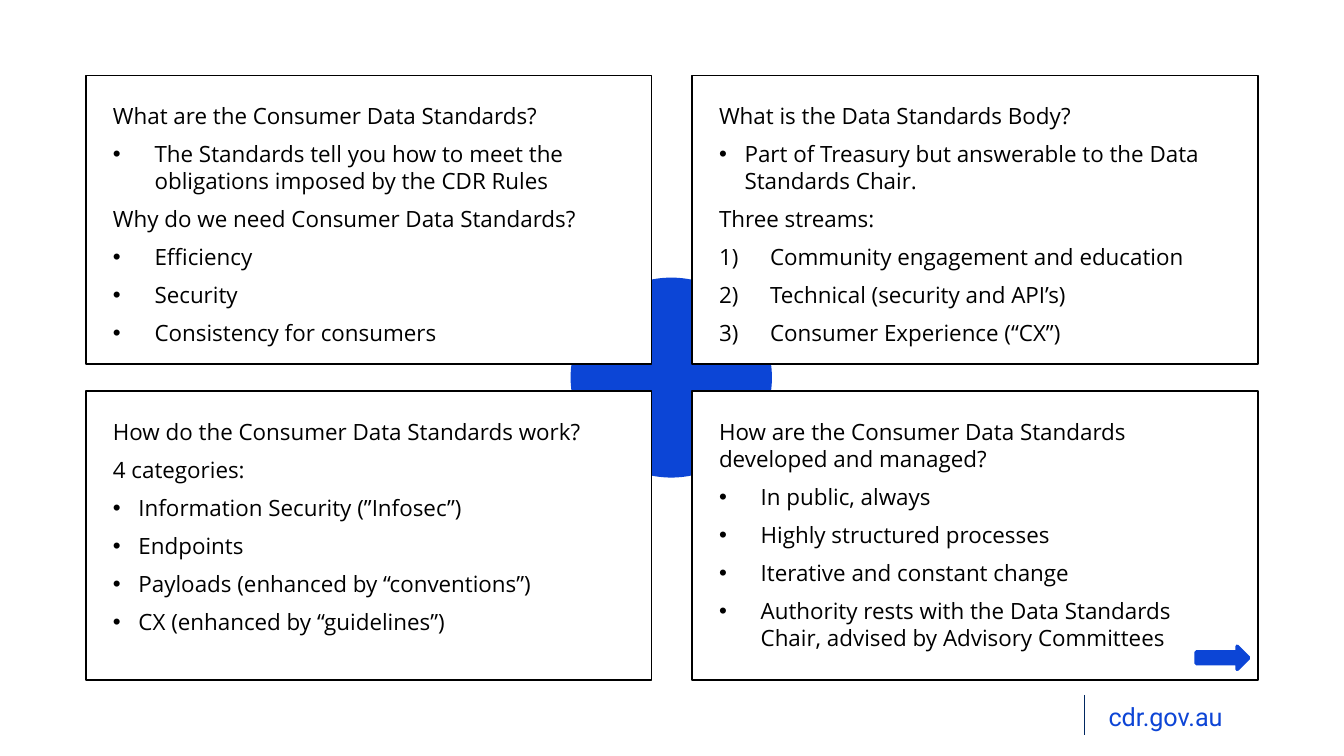
from lxml.etree import SubElement
from pptx import Presentation
from pptx.dml.color import RGBColor
from pptx.enum.shapes import MSO_CONNECTOR, MSO_SHAPE
from pptx.enum.text import MSO_ANCHOR, PP_ALIGN
from pptx.oxml.ns import qn
from pptx.util import Inches, Pt

BLUE = RGBColor(0x0C, 0x45, 0xD6)
FOOTER_BLUE = RGBColor(0x0D, 0x45, 0xD6)
NAVY = RGBColor(0x00, 0x27, 0x60)
BLACK = RGBColor(0, 0, 0)
WHITE = RGBColor(255, 255, 255)

# Two by two grid of cards
LEFT, TOP = 0.64, 0.56
CARD_W, CARD_H = 4.21, 2.15
COLUMN_STEP, ROW_STEP = CARD_W + 0.3, CARD_H + 0.2
INSET = Inches(0.2)

# Each card: column, row, bullet indent, lines of (marker, text)
CARDS = [
    (0, 0, 0.31, [
        ("", "What are the Consumer Data Standards?"),
        ("•", "The Standards tell you how to meet the obligations imposed by the CDR Rules"),
        ("", "Why do we need Consumer Data Standards?"),
        ("•", "Efficiency"),
        ("•", "Security"),
        ("•", "Consistency for consumers"),
    ]),
    (1, 0, 0.19, [
        ("", "What is the Data Standards Body?"),
        ("•", "Part of Treasury but answerable to the Data Standards Chair."),
        ("", "Three streams:"),
        ("1)", "Community engagement and education"),
        ("1)", "Technical (security and API’s)"),
        ("1)", "Consumer Experience (“CX”)"),
    ]),
    (1, 1, 0.31, [
        ("", "How are the Consumer Data Standards developed and managed?"),
        ("•", "In public, always"),
        ("•", "Highly structured processes"),
        ("•", "Iterative and constant change"),
        ("•", "Authority rests with the Data Standards Chair, advised by Advisory Committees"),
    ]),
    (0, 1, 0.19, [
        ("", "How do the Consumer Data Standards work?"),
        ("", "4 categories:"),
        ("•", "Information Security (”Infosec”)"),
        ("•", "Endpoints"),
        ("•", "Payloads (enhanced by “conventions”)"),
        ("•", "CX (enhanced by “guidelines”)"),
    ]),
]
NUMBER_INDENT = 0.38


def add_filled(preset, left, top, width, height, fill, outline, weight):
    shape = slide.shapes.add_shape(
        preset, Inches(left), Inches(top), Inches(width), Inches(height))
    shape.shadow.inherit = False
    shape.fill.solid()
    shape.fill.fore_color.rgb = fill
    shape.line.color.rgb = outline
    shape.line.width = Pt(weight)
    return shape


def set_marker(paragraph, marker, indent):
    properties = paragraph._p.get_or_add_pPr()
    properties.set("marL", str(Inches(indent)))
    properties.set("indent", str(-Inches(indent)))
    if marker == "•":
        SubElement(properties, qn("a:buFont"), typeface="Arial")
        SubElement(properties, qn("a:buChar"), char=marker)
    else:
        SubElement(properties, qn("a:buAutoNum"), type="arabicParenR")


prs = Presentation()
prs.slide_width = Inches(10)
prs.slide_height = prs.slide_width * 9 // 16
slide = prs.slides.add_slide(prs.slide_layouts[6])

# Footer address and its divider
footer = slide.shapes.add_textbox(Inches(8.15), Inches(5.17), Inches(1.57), Inches(0.33))
footer.text_frame.word_wrap = True
address = footer.text_frame.paragraphs[0]
address.text = "cdr.gov.au"
address.font.name = "Roboto"
address.font.size = Pt(13.5)
address.font.color.rgb = FOOTER_BLUE

divider = slide.shapes.add_connector(
    MSO_CONNECTOR.STRAIGHT, Inches(8.07), Inches(5.17), Inches(8.07), Inches(5.47))
divider.line.color.rgb = NAVY
divider.line.width = Pt(0.75)
SubElement(divider._element.spPr, qn("a:effectLst"))

# Hub behind the cards
add_filled(MSO_SHAPE.OVAL, 4.26, 2.08, 1.47, 1.46, BLUE, BLUE, 2)

for column, row, bullet_indent, lines in CARDS:
    card = add_filled(
        MSO_SHAPE.RECTANGLE, LEFT + column * COLUMN_STEP, TOP + row * ROW_STEP,
        CARD_W, CARD_H, WHITE, BLACK, 0.75)
    frame = card.text_frame
    frame.word_wrap = True
    frame.vertical_anchor = MSO_ANCHOR.TOP
    frame.margin_left = frame.margin_right = INSET
    frame.margin_top = frame.margin_bottom = INSET
    for i, (marker, text) in enumerate(lines):
        paragraph = frame.paragraphs[0] if i == 0 else frame.add_paragraph()
        paragraph.text = text
        paragraph.alignment = PP_ALIGN.LEFT
        paragraph.space_before = Pt(3 if i else 0)
        paragraph.space_after = Pt(3)
        if marker:
            set_marker(paragraph, marker, bullet_indent if marker == "•" else NUMBER_INDENT)
        paragraph.font.name = "Open Sans"
        paragraph.font.size = Pt(12)
        paragraph.font.color.rgb = BLACK

# Pointer to what comes next
add_filled(MSO_SHAPE.RIGHT_ARROW, 8.9, 4.81, 0.39, 0.17, BLUE, BLUE, 2)

prs.save("out.pptx")
